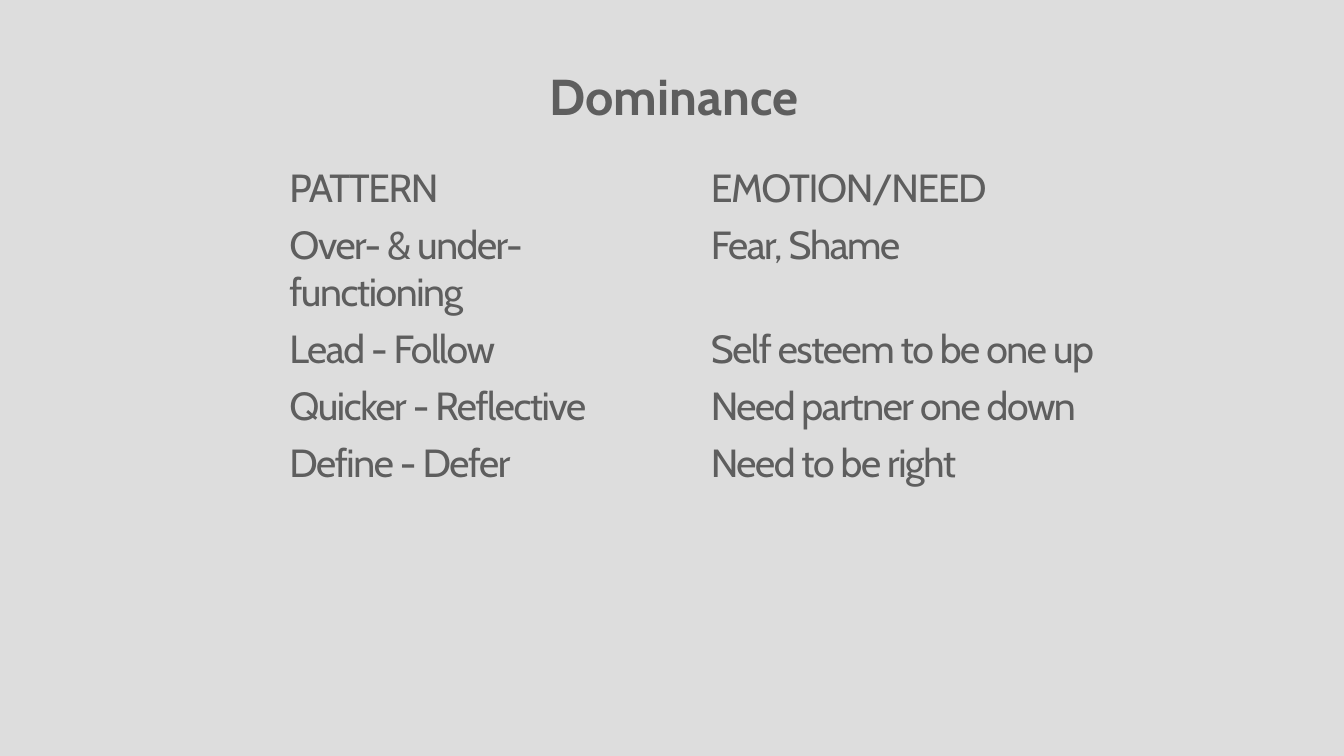
from dataclasses import dataclass

from pptx import Presentation
from pptx import util as u
from pptx.dml import color
from pptx.enum import text

NO_GRID_STYLE = "{2D5ABB26-0587-4C30-8999-92F81FD0307C}"
BACKGROUND = "DDDDDD"
GREY = "5E5E5E"
COLUMN_WIDTHS = (4.18, 4.64)
ROW_HEIGHT = 0.56


@dataclass(frozen=True)
class Row:
    pattern: str
    need: str


ROWS = [
    Row("PATTERN", "EMOTION/NEED"),
    Row("Over- & under-functioning", "Fear, Shame"),
    Row("Lead - Follow", "Self esteem to be one up"),
    Row("Quicker - Reflective", "Need partner one down"),
    Row("Define - Defer", "Need to be right"),
]


def set_fill(fill, rgb: str) -> None:
    fill.solid()
    fill.fore_color.rgb = color.RGBColor.from_string(rgb)


def write(tf, content: str, size: int, bold: bool, align, spacing: int = 0) -> None:
    p = tf.paragraphs[0]
    p.alignment = align
    r = p.add_run()
    r.text = content
    for name, value in {"name": "Cabin", "size": u.Pt(size), "bold": bold}.items():
        setattr(r.font, name, value)
    set_fill(r.font.fill, GREY)
    if spacing:
        r.font._element.set("spc", str(spacing * 100))


def add_title(slide) -> None:
    sp = slide.shapes.title
    box = {"left": 4.97, "top": 0.59, "width": 3.43, "height": 0.71}
    for name, value in box.items():
        setattr(sp, name, u.Inches(value))
    tf = sp.text_frame
    frame = {
        "word_wrap": True,
        "auto_size": text.MSO_AUTO_SIZE.SHAPE_TO_FIT_TEXT,
        "vertical_anchor": text.MSO_ANCHOR.MIDDLE,
    }
    for name, value in frame.items():
        setattr(tf, name, value)
    write(tf, "Dominance", 36, True, text.PP_ALIGN.CENTER)


def add_patterns(slide) -> None:
    frame = slide.shapes.add_table(
        len(ROWS), len(COLUMN_WIDTHS), u.Inches(2.77), u.Inches(1.58),
        u.Inches(sum(COLUMN_WIDTHS)), u.Inches(ROW_HEIGHT * len(ROWS)),
    )
    table = frame.table
    for name in ("first_row", "horz_banding"):
        setattr(table, name, False)
    table._tbl.tblPr[0].text = NO_GRID_STYLE
    for column, width in zip(table.columns, COLUMN_WIDTHS):
        column.width = u.Inches(width)
    for i, row in enumerate(ROWS):
        for j, content in enumerate((row.pattern, row.need)):
            cell = table.cell(i, j)
            cell.fill.background()
            write(cell.text_frame, content, 28, False, text.PP_ALIGN.LEFT, -1)


def main() -> None:
    prs = Presentation()
    prs.slide_width, prs.slide_height = u.Inches(13.33), u.Inches(7.5)
    slide = prs.slides.add_slide(prs.slide_layouts[5])
    set_fill(slide.background.fill, BACKGROUND)
    add_title(slide)
    add_patterns(slide)
    prs.save("out.pptx")


if __name__ == "__main__":
    main()
